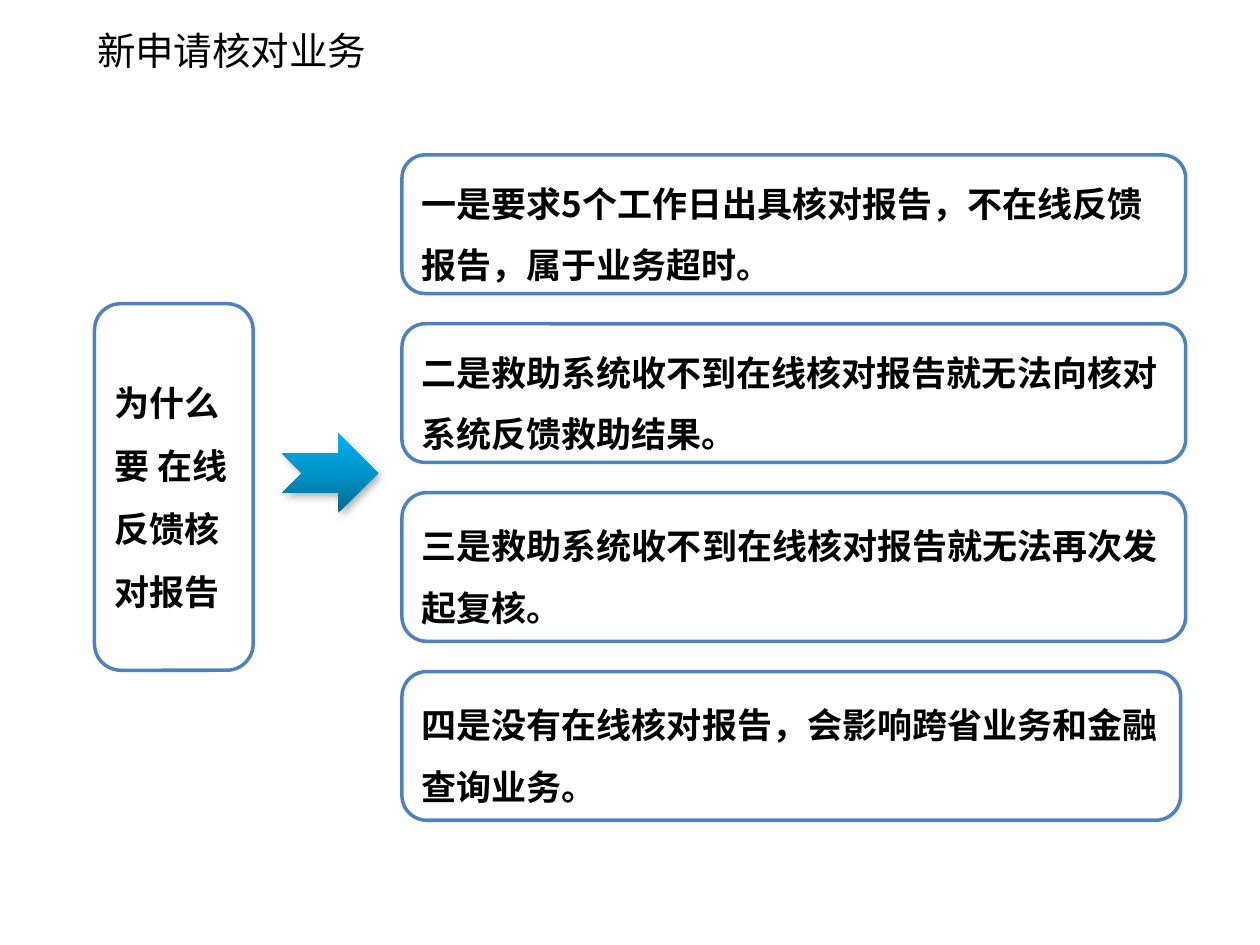
from lxml.etree import SubElement
from pptx import Presentation
from pptx.dml.color import RGBColor
from pptx.enum.shapes import MSO_SHAPE
from pptx.enum.text import MSO_ANCHOR, PP_ALIGN
from pptx.oxml import parse_xml
from pptx.oxml.ns import nsdecls, qn
from pptx.util import Inches, Pt

TITLE = "新申请核对业务"
QUESTION = "为什么要 在线反馈核对报告"
REASONS = [
    ("一是要求5个工作日出具核对报告，不在线反馈报告，属于业务超时。", 6.22, 1.1),
    ("二是救助系统收不到在线核对报告就无法向核对系统反馈救助结果。", 6.22, 1.1),
    ("三是救助系统收不到在线核对报告就无法再次发起复核。", 6.22, 1.18),
    ("四是没有在线核对报告，会影响跨省业务和金融查询业务。", 6.18, 1.18),
]
REASON_LEFT, REASON_TOP, REASON_GAP = 3.19, 1.23, 0.24

LATIN_FONT = "Calibri"
CHINESE_FONT = "Noto Sans CJK SC"
BLACK = RGBColor(0x00, 0x00, 0x00)
BORDER_BLUE = RGBColor(0x4F, 0x81, 0xBD)
ARROW_STOPS = [
    (0, RGBColor(0x00, 0x68, 0x8E)),
    (50, RGBColor(0x00, 0x94, 0xCA)),
    (100, RGBColor(0x00, 0xB0, 0xF0)),
]


def write_text(shape, text, font=CHINESE_FONT, size=20, bold=True, spacing=None):
    frame = shape.text_frame
    frame.word_wrap = True
    frame.vertical_anchor = MSO_ANCHOR.MIDDLE
    paragraph = frame.paragraphs[0]
    paragraph.alignment = PP_ALIGN.LEFT
    paragraph.line_spacing = spacing
    run = paragraph.add_run()
    run.text = text
    run.font.name = font
    run.font.size = Pt(size)
    run.font.bold = bold
    run.font.color.rgb = BLACK
    SubElement(run.font._element, qn("a:ea")).set("typeface", CHINESE_FONT)


def add_box(slide, left, top, width, height, text, **text_format):
    shape = slide.shapes.add_shape(
        MSO_SHAPE.ROUNDED_RECTANGLE, *map(Inches, (left, top, width, height))
    )
    shape.shadow.inherit = False
    shape.fill.background()
    shape.line.color.rgb = BORDER_BLUE
    shape.line.width = Pt(2)
    write_text(shape, text, **text_format)


def add_arrow(slide, left, top, width, height):
    arrow = slide.shapes.add_shape(
        MSO_SHAPE.NOTCHED_RIGHT_ARROW, *map(Inches, (left, top, width, height))
    )
    arrow.line.fill.background()
    arrow.fill.gradient()
    arrow.fill.gradient_angle = 90
    properties = arrow._element.spPr
    stops = properties.find(".//" + qn("a:gsLst"))
    for stop in list(stops):
        stops.remove(stop)
    for position, color in ARROW_STOPS:
        stop = SubElement(stops, qn("a:gs"), pos=str(position * 1000))
        SubElement(stop, qn("a:srgbClr"), val=str(color))
    arrow.shadow.inherit = False
    properties.find(qn("a:effectLst")).append(parse_xml(
        f'<a:outerShdw {nsdecls("a")} blurRad="{Pt(4.5)}" dist="{Pt(2.6)}" '
        f'dir="{53 * 60000}" algn="ctr" rotWithShape="0">'
        '<a:srgbClr val="000000"><a:alpha val="30000"/></a:srgbClr></a:outerShdw>'
    ))


def main():
    presentation = Presentation()
    presentation.slide_width, presentation.slide_height = Inches(10), Inches(7.5)
    slide = presentation.slides.add_slide(presentation.slide_layouts[5])

    title = slide.shapes.title
    title.left, title.top, title.width, title.height = map(Inches, (0.67, 0.08, 7.67, 0.64))
    write_text(title, TITLE, font=LATIN_FONT, size=22, bold=False)

    top = REASON_TOP
    for text, width, height in REASONS:
        add_box(slide, REASON_LEFT, top, width, height, text, spacing=Pt(35))
        top += height + REASON_GAP

    add_arrow(slide, 2.24, 3.44, 0.76, 0.63)
    add_box(slide, 0.75, 2.41, 1.26, 2.91, QUESTION, font=LATIN_FONT, spacing=1.5)
    presentation.save("out.pptx")


if __name__ == "__main__":
    main()
